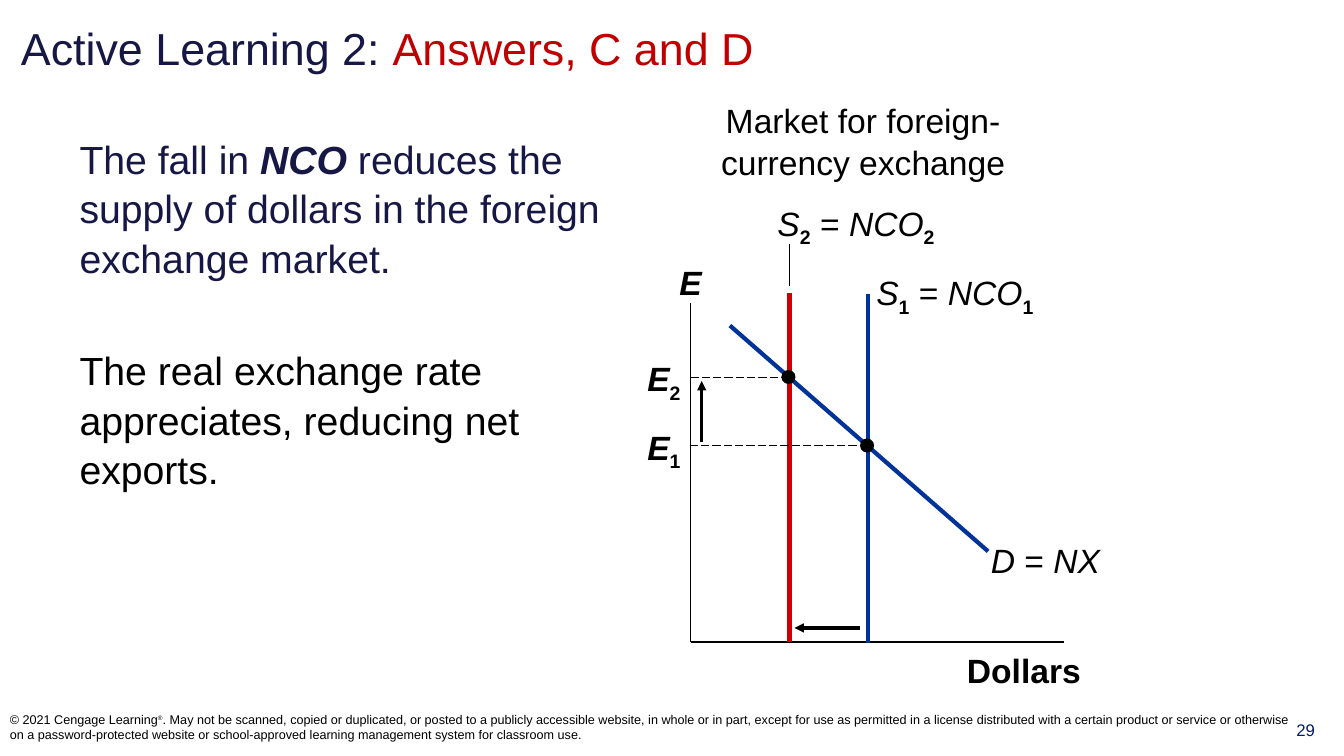
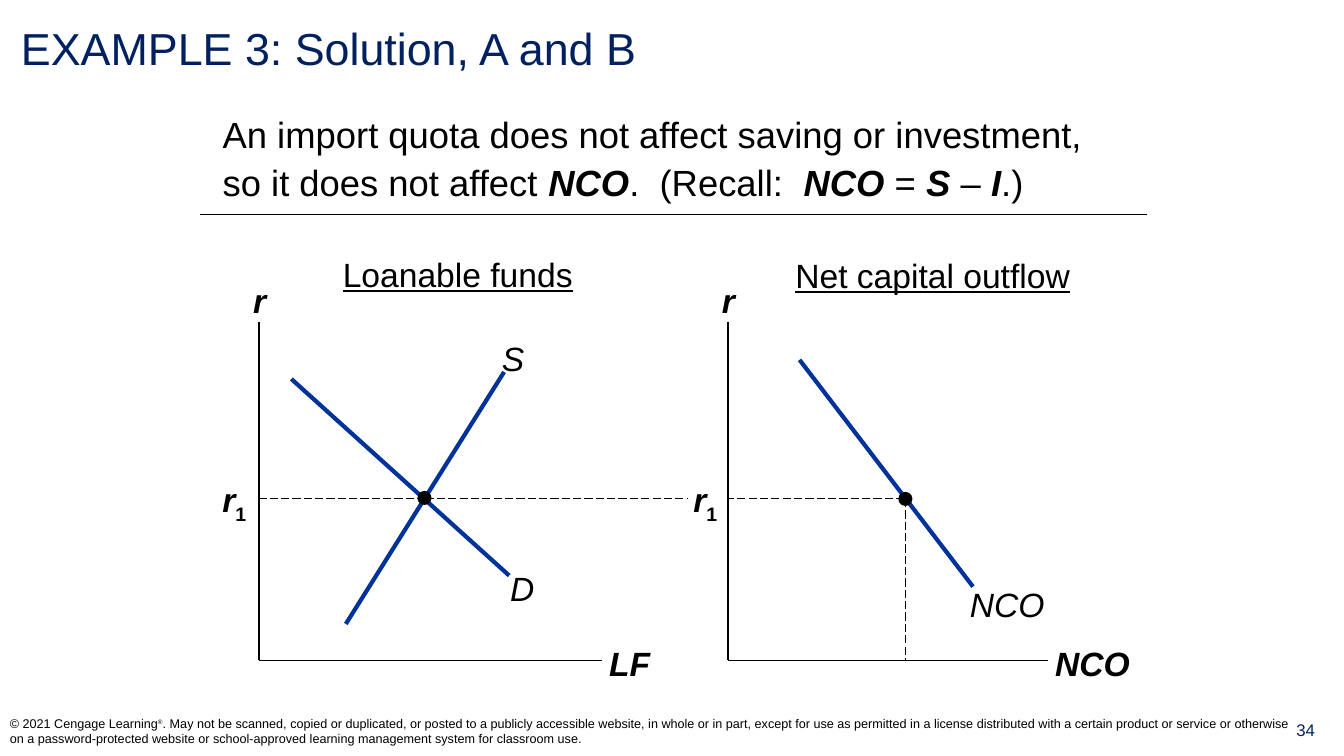
from pptx import Presentation
from pptx.dml.color import RGBColor
from pptx.enum.dml import MSO_LINE_DASH_STYLE as Dash
from pptx.enum.shapes import MSO_CONNECTOR as Conn, MSO_SHAPE as Shape
from pptx.enum.text import MSO_ANCHOR as Anchor, PP_ALIGN as Align
from pptx.oxml.ns import qn
from pptx.util import Inches, Pt
from lxml.etree import SubElement

BLACK = RGBColor(0x00, 0x00, 0x00)
BLUE = RGBColor(0x00, 0x33, 0x99)
RED = RGBColor(0xCC, 0x00, 0x00)
CRIMSON = RGBColor(0xC0, 0x00, 0x00)
NAVY = RGBColor(0x00, 0x20, 0x60)
INDIGO = RGBColor(0x17, 0x17, 0x45)
FONT = "Arial"
DOT = 0.14

FOOTER = [
    ("© 2021 Cengage Learning", ""), ("®", "^"),
    (". May not be scanned, copied or duplicated, or posted to a publicly "
     "accessible website, in whole or in part, except for use as permitted in "
     "a license distributed with a certain product or service or otherwise on "
     "a password-protected website or school-approved learning management "
     "system for classroom use.", "")]


# Run styles: b bold, i italic, u underline, _ subscript, ^ superscript
def text(slide, box, runs, size=24, color=BLACK, align=Align.CENTER,
         pad=True, space=1.05):
    frame = slide.shapes.add_textbox(*map(Inches, box)).text_frame
    frame.word_wrap = True
    if not pad:
        frame.margin_left = frame.margin_right = 0
        frame.margin_top = frame.margin_bottom = 0
    para = frame.paragraphs[0]
    para.alignment, para.line_spacing = align, space
    for words, style in runs:
        if words == "\n":
            para.add_line_break()
            continue
        run = para.add_run()
        run.text = words
        font = run.font
        font.name, font.size, font.color.rgb = FONT, Pt(size), color
        font.bold, font.italic = "b" in style, "i" in style
        font.underline = "u" in style
        if "_" in style:
            font._element.set("baseline", "-25000")
        if "^" in style:
            font.size = Pt(size - 1)
            font._element.set("baseline", "30000")
    return frame


def line(slide, ends, color=BLACK, width=1, dash=False, arrow=False):
    link = slide.shapes.add_connector(Conn.STRAIGHT, *map(Inches, ends))
    link.line.color.rgb, link.line.width = color, Pt(width)
    if dash:
        link.line.dash_style = Dash.LONG_DASH
    props = link._element.spPr
    if arrow:
        SubElement(props.find(qn("a:ln")), qn("a:tailEnd"), type="triangle")
    SubElement(props, qn("a:effectLst"))


deck = Presentation()
deck.slide_width, deck.slide_height = Inches(13.33), Inches(7.5)

# Title, page number and footer of each slide
pages = []
for runs, color, num, top in (
        ([("Active Learning 2: ", ""), ("Answers, C and D", "")],
         INDIGO, "29", 6.92),
        ([("EXAMPLE 3: Solution, A and B", "")], NAVY, "34", 7)):
    page = deck.slides.add_slide(deck.slide_layouts[6])
    title = text(page, (0.11, 0.11, 13, 0.72), runs, 32, color, Align.LEFT,
                 space=1)
    title.vertical_anchor = Anchor.MIDDLE
    for run in title.paragraphs[0].runs[1:]:
        run.font.color.rgb = CRIMSON
    text(page, (12.57, 7.08, 0.76, 0.41), [(num, "")], 12, NAVY)
    foot = text(page, (0, top, 13, 7.5 - top), FOOTER, 9, align=Align.LEFT,
                space=1)
    foot.vertical_anchor = Anchor.MIDDLE
    pages.append(page)
market, quota = pages

# Market slide: explanation
body = text(market, (0.69, 1.27, 5.62, 3.25),
            [("The fall in ", ""), ("NCO", "bi"), (" reduces the", ""),
             ("\n", ""),
             ("supply of dollars in the foreign exchange market.", "")],
            28, INDIGO, Align.LEFT)
para = body.add_paragraph()
para.text = "The real exchange rate appreciates, reducing net exports."
para.line_spacing, para.space_before = 1.05, Pt(45)
font = para.runs[0].font
font.name, font.size, font.color.rgb = FONT, Pt(28), BLACK
text(market, (6.93, 0.92, 3.26, 0.91),
     [("Market for foreign-currency exchange", "")])

# Market slide: axes, supply and demand
for ends in ((6.85, 3.01, 6.85, 6.37), (6.85, 6.37, 10.55, 6.37)):
    line(market, ends)
for ends, color in (((8.61, 6.38, 8.61, 2.92), BLUE),
                    ((7.24, 3.23, 9.8, 5.47), BLUE),
                    ((7.83, 6.37, 7.83, 2.91), RED)):
    line(market, ends, color, 3)
line(market, (7.83, 2.84, 7.83, 2.42), width=0.75)
for ends in ((8.53, 6.23, 7.88, 6.23), (6.96, 4.39, 6.96, 3.78)):
    line(market, ends, width=2.25, arrow=True)

# Market slide: labels
for num, left, top, x, y, rate in (("1", 8.56, 2.63, 8.61, 4.42, 4.21),
                                   ("2", 7.58, 1.94, 7.83, 3.745, 3.53)):
    text(market, (left, top, 1.82, 0.49),
         [("S", "i"), (num, "b_"), (" = ", ""), ("NCO", "i"), (num, "b_")])
    line(market, (x, y, 6.85, y), width=0.75, dash=True)
    text(market, (6.36, rate, 0.45, 0.4), [("E", "bi"), (num, "b_")],
         pad=False)
text(market, (6.62, 2.53, 0.46, 0.5), [("E", "bi")])
text(market, (9.53, 6.43, 1.25, 0.4), [("Dollars", "b")], pad=False)
text(market, (9.73, 5.29, 1.33, 0.5),
     [("D", "i"), (" = ", ""), ("NX", "i")], align=Align.LEFT)

# Quota slide: statement and rule
text(quota, (2.11, 1.02, 9.21, 1.06),
     [("An import quota does not affect saving or investment,", ""),
      ("\n", ""), ("so it does not affect ", ""), ("NCO", "bi"),
      (".  (Recall:  ", ""), ("NCO", "bi"), (" = ", ""), ("S", "bi"),
      (" – ", ""), ("I", "bi"), (".)", "")],
     26, align=Align.LEFT, space=1.1)
line(quota, (1.98, 2.13, 11.38, 2.13), width=0.75)

# Quota slide: both graphs
for x, right, head, box, name, wide, mark in (
        (2.57, 5.97, "Loanable funds", (3.21, 2.45, 2.66, 0.5),
         "LF", 0.65, 2.11),
        (7.22, 10.39, "Net capital outflow", (7.62, 2.46, 3.26, 0.5),
         "NCO", 0.99, 6.78)):
    line(quota, (x, 3.19, x, 6.55))
    line(quota, (x, 6.55, right, 6.55))
    text(quota, box, [(head, "u")])
    text(quota, (x - 0.18, 2.71, 0.37, 0.5), [("r", "bi")])
    text(quota, (right - 0.05, 6.31, wide, 0.5), [(name, "bi")])
    text(quota, (mark, 4.73, 0.43, 0.4), [("r", "bi"), ("1", "b_")],
         pad=False)
for ends, name, left, top, wide in (
        ((2.89, 3.76, 5.05, 5.71), "D", 4.96, 5.57, 0.75),
        ((3.43, 6.19, 5, 3.69), "S", 4.88, 3.28, 0.56),
        ((7.93, 3.57, 9.65, 5.82), "NCO", 9.52, 5.72, 1.1)):
    line(quota, ends, BLUE, 3)
    text(quota, (left, top, wide, 0.5), [(name, "i")], align=Align.LEFT)
for ends in ((4.22, 4.95, 2.57, 4.95), (4.22, 4.95, 6.81, 4.95),
             (8.97, 4.95, 7.23, 4.95), (8.98, 4.95, 8.98, 6.55)):
    line(quota, ends, width=0.75, dash=True)

# Equilibrium points
for page, x, y in ((market, 8.6, 4.42), (market, 7.82, 3.74),
                   (quota, 4.21, 4.94), (quota, 8.98, 4.95)):
    dot = page.shapes.add_shape(Shape.OVAL, Inches(x - DOT / 2),
                                Inches(y - DOT / 2), Inches(DOT), Inches(DOT))
    dot.shadow.inherit = False
    dot.fill.solid()
    dot.fill.fore_color.rgb = BLACK
    dot.line.fill.background()

deck.save("out.pptx")
